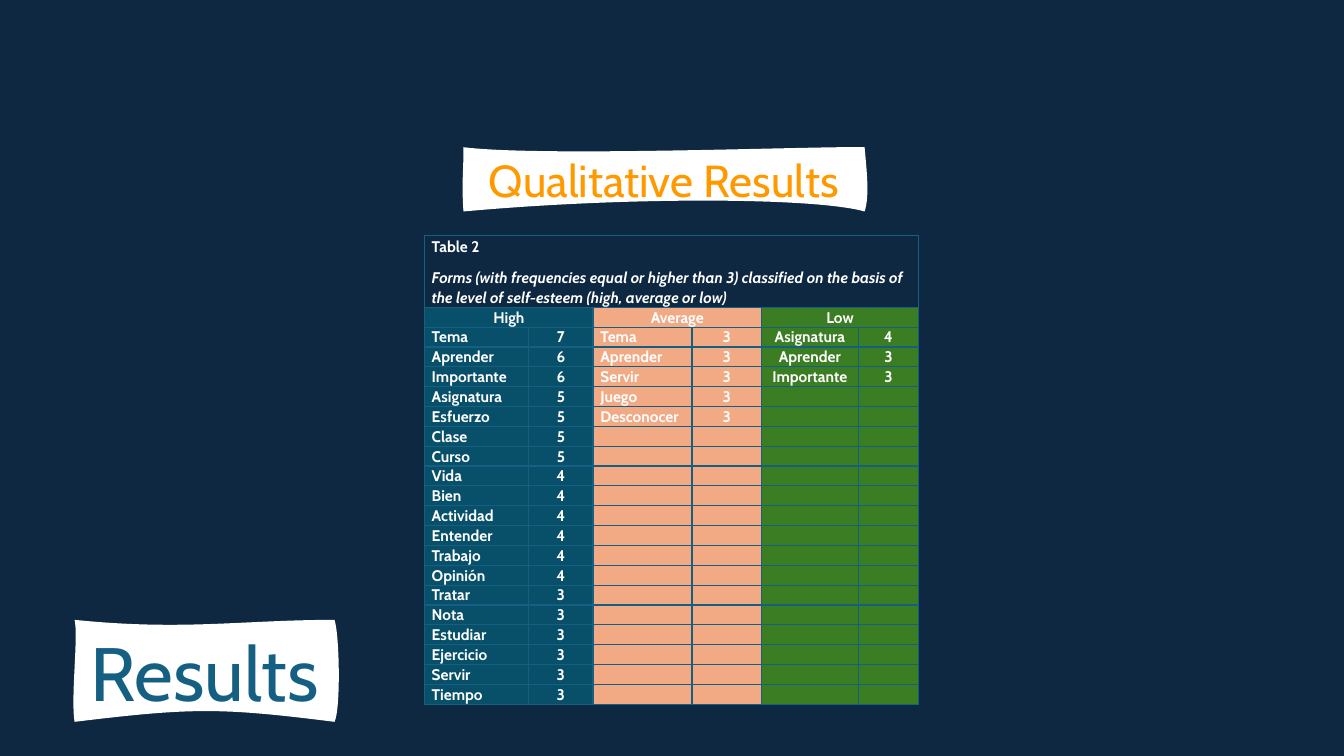
"""Build the qualitative results slide with its word frequency table."""
from lxml.etree import SubElement
from pptx import Presentation
from pptx.dml.color import RGBColor
from pptx.enum.text import MSO_ANCHOR, PP_ALIGN
from pptx.oxml.ns import qn
from pptx.util import Cm, Pt

FONT = "Cabin"
NAVY, TEAL, WHITE, ORANGE = "0E2841", "156082", "FFFFFF", "FF9900"

BANNERS = [
    ("Results", 54, TEAL, (1.88, 15.62), [
        ((4.62, 15.9), (6.12, 15.62), (8.43, 15.62)),
        ((8.56, 16), (8.59, 17.88), (8.43, 18.19)),
        ((5.56, 17.83), (4.85, 17.83), (1.88, 18.19)),
        ((1.78, 17.58), (1.98, 16.03), (1.88, 15.62)),
    ]),
    ("Qualitative Results", 32, ORANGE, (11.68, 3.71), [
        ((13.69, 3.96), (20.52, 3.68), (21.79, 3.71)),
        ((21.84, 4.29), (21.92, 4.93), (21.79, 5.33)),
        ((20.57, 4.98), (15.85, 4.95), (11.68, 5.33)),
        ((11.63, 4.52), (11.68, 4.5), (11.68, 3.71)),
    ]),
]

CAPTION = [
    "Table 2",
    "Forms (with frequencies equal or higher than 3) classified on the basis of "
    "the level of self-esteem (high, average or low)",
]
LEVELS = [
    ("High", "084F6A", PP_ALIGN.LEFT, [
        ("Tema", 7), ("Aprender", 6), ("Importante", 6), ("Asignatura", 5),
        ("Esfuerzo", 5), ("Clase", 5), ("Curso", 5), ("Vida", 4), ("Bien", 4),
        ("Actividad", 4), ("Entender", 4), ("Trabajo", 4), ("Opinión", 4),
        ("Tratar", 3), ("Nota", 3), ("Estudiar", 3), ("Ejercicio", 3),
        ("Servir", 3), ("Tiempo", 3),
    ]),
    ("Average", "F2AA84", PP_ALIGN.LEFT, [
        ("Tema", 3), ("Aprender", 3), ("Servir", 3), ("Juego", 3), ("Desconocer", 3),
    ]),
    ("Low", "3B7D23", PP_ALIGN.CENTER, [
        ("Asignatura", 4), ("Aprender", 3), ("Importante", 3),
    ]),
]
TABLE_LEFT, TABLE_TOP = 10.7, 5.94
COLUMN_WIDTHS = [2.62, 1.63, 2.49, 1.75, 2.44, 1.52]
CAPTION_HEIGHT, ROW_HEIGHT = 1.78, 0.5
CAPTION_SPACING, ROW_SPACING = 1.07, 1.04


def color(hex_code):
    return RGBColor.from_string(hex_code)


def paint(fill, hex_code):
    fill.solid()
    fill.fore_color.rgb = color(hex_code)


def style_font(paragraph, size, hex_code, bold=False, italic=False):
    font = paragraph.font
    font.name, font.size, font.bold, font.italic = FONT, Pt(size), bold, italic
    font.color.rgb = color(hex_code)


def bend_edges(banner, curves):
    edges = list(banner._element.iter(qn("a:lnTo")))
    for edge, curve in zip(edges, curves):
        edge.tag = qn("a:cubicBezTo")
        edge.clear()
        for x, y in curve:
            SubElement(edge, qn("a:pt"), x=str(Cm(x) - banner.left), y=str(Cm(y) - banner.top))


def add_banner(slide, label, size, hex_code, start, curves):
    builder = slide.shapes.build_freeform(Cm(start[0]), Cm(start[1]))
    builder.add_line_segments([(Cm(x), Cm(y)) for *_, (x, y) in curves])
    banner = builder.convert_to_shape()
    bend_edges(banner, curves)
    banner.shadow.inherit = False
    paint(banner.fill, WHITE)
    banner.line.fill.background()
    frame = banner.text_frame
    frame.word_wrap = False
    frame.vertical_anchor = MSO_ANCHOR.MIDDLE
    frame.text = label
    frame.paragraphs[0].alignment = PP_ALIGN.CENTER
    style_font(frame.paragraphs[0], size, hex_code)


def set_border(cell, side, hex_code, width):
    border = SubElement(cell._tc.get_or_add_tcPr(), qn(f"a:ln{side}"), w=str(Pt(width)))
    SubElement(SubElement(border, qn("a:solidFill")), qn("a:srgbClr"), val=hex_code)


def format_cell(cell, hex_code, thick_right=False):
    cell.margin_left = cell.margin_right = Cm(0.18)
    cell.margin_top = cell.margin_bottom = 0
    cell.vertical_anchor = MSO_ANCHOR.MIDDLE
    for side in "LRTB":
        set_border(cell, side, TEAL, 1.5 if thick_right and side == "R" else 1)
    paint(cell.fill, hex_code)


def write_cell(cell, lines, alignment, spacing=ROW_SPACING):
    cell.text = "\n".join(lines)
    for index, paragraph in enumerate(cell.text_frame.paragraphs):
        paragraph.alignment = alignment
        paragraph.line_spacing = spacing
        paragraph.space_after = Pt(8)
        style_font(paragraph, 11, WHITE, bold=True, italic=index > 0)


def shrink_empty(cell):
    paragraph = cell.text_frame.paragraphs[0]
    style_font(paragraph, 8, WHITE)
    SubElement(paragraph._p, qn("a:endParaRPr"), sz="800")


def add_frequency_table(slide):
    row_count = max(len(words) for *_, words in LEVELS) + 2
    height = CAPTION_HEIGHT + ROW_HEIGHT * (row_count - 1)
    table = slide.shapes.add_table(
        row_count, len(COLUMN_WIDTHS), Cm(TABLE_LEFT), Cm(TABLE_TOP),
        Cm(sum(COLUMN_WIDTHS)), Cm(height)).table
    table.first_row = table.horz_banding = False
    for column, width in zip(table.columns, COLUMN_WIDTHS):
        column.width = Cm(width)
    for index, row in enumerate(table.rows):
        row.height = Cm(ROW_HEIGHT if index else CAPTION_HEIGHT)

    for column in range(len(COLUMN_WIDTHS)):
        format_cell(table.cell(0, column), NAVY)
    table.cell(0, 0).merge(table.cell(0, len(COLUMN_WIDTHS) - 1))
    write_cell(table.cell(0, 0), CAPTION, PP_ALIGN.LEFT, CAPTION_SPACING)

    for level, (heading, hex_code, word_alignment, words) in enumerate(LEVELS):
        left = 2 * level
        for row in range(1, row_count):
            for column in (left, left + 1):
                format_cell(table.cell(row, column), hex_code, thick_right=level == 0)
        table.cell(1, left).merge(table.cell(1, left + 1))
        write_cell(table.cell(1, left), [heading], PP_ALIGN.CENTER)
        for row, (word, frequency) in enumerate(words, 2):
            write_cell(table.cell(row, left), [word], word_alignment)
            write_cell(table.cell(row, left + 1), [str(frequency)], PP_ALIGN.CENTER)
        for row in range(len(words) + 2, row_count):
            for column in (left, left + 1):
                shrink_empty(table.cell(row, column))


def main():
    deck = Presentation()
    deck.slide_width, deck.slide_height = Cm(33.87), Cm(19.05)
    slide = deck.slides.add_slide(deck.slide_layouts[6])
    paint(slide.background.fill, NAVY)
    for banner in BANNERS:
        add_banner(slide, *banner)
    add_frequency_table(slide)
    deck.save("out.pptx")


if __name__ == "__main__":
    main()
